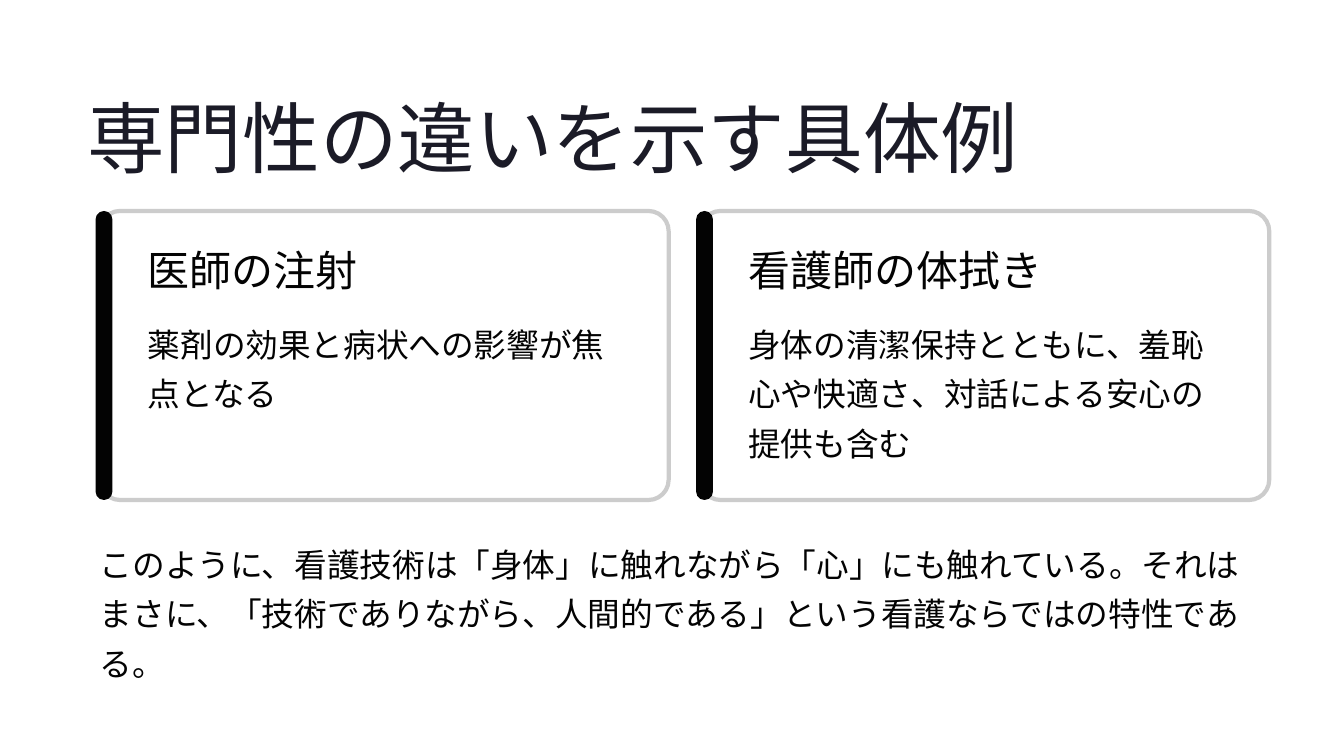
from lxml import etree
from pptx import Presentation, util as u
from pptx.dml.color import RGBColor
from pptx.enum import shapes, text
from pptx.oxml.ns import qn

INK, TITLE_INK, BORDER, WHITE = "030303", "1B1B27", "CCCCCC", "FFFFFF"
HEADING_FONT, BODY_FONT = "Inter", "Lato"


def paint(color_format, hex_color):
    """Give a font colour or a solid fill's foreground its RGB value."""
    color_format.rgb = RGBColor.from_string(hex_color)


class SlideBuilder:
    def __init__(self, slide):
        self.slide = slide

    def set_text(self, holder, words, font, size, leading, color=INK, wrap=True):
        frame = holder.text_frame
        frame.margin_left = frame.margin_right = 0
        frame.margin_top = frame.margin_bottom = 0
        frame.auto_size = text.MSO_AUTO_SIZE.NONE
        frame.vertical_anchor = text.MSO_ANCHOR.TOP
        frame.word_wrap = wrap
        frame.text = words
        paragraph = frame.paragraphs[0]
        paragraph.alignment = text.PP_ALIGN.LEFT
        paragraph.space_before = u.Pt(0)
        paragraph.line_spacing = u.Pt(leading)
        paragraph.font.name, paragraph.font.size = font, u.Pt(size)
        paint(paragraph.font.color, color)

    def title(self, words, left, top, width, height):
        title = self.slide.shapes.title
        title.left, title.top = u.Cm(left), u.Cm(top)
        title.width, title.height = u.Cm(width), u.Cm(height)
        self.set_text(title, words, HEADING_FONT, 66.5, 83.5, TITLE_INK, wrap=False)

    def textbox(self, left, top, width, height):
        return self.slide.shapes.add_textbox(
            u.Cm(left), u.Cm(top), u.Cm(width), u.Cm(height))

    def heading(self, words, *box):
        self.set_text(self.textbox(*box), words, HEADING_FONT, 36, 41.5, wrap=False)

    def body(self, words, *box):
        self.set_text(self.textbox(*box), words, BODY_FONT, 28, 42.5)

    def rounded(self, left, top, width, height, corner, fill):
        shape = self.slide.shapes.add_shape(
            shapes.MSO_SHAPE.ROUNDED_RECTANGLE,
            u.Cm(left), u.Cm(top), u.Cm(width), u.Cm(height))
        shape.adjustments[0] = corner
        shape.shadow.inherit = False
        shape.fill.solid()
        paint(shape.fill.fore_color, fill)
        shape.line.fill.background()
        return shape

    def card(self, left, heading, description):
        top, height = 6.38, 8.74
        panel = self.rounded(left, top, 17.2, height, 0.07, WHITE)
        panel.line.width = u.Pt(3.6)
        panel.line.fill.solid()
        paint(panel.line.fill.fore_color, BORDER)
        fill_color = panel.element.spPr.find(qn("a:solidFill"))[0]
        etree.SubElement(fill_color, qn("a:alpha"), val="95000")
        self.rounded(left - 0.13, top, 0.51, height, 0.5, INK)
        self.heading(heading, left + 1.45, top + 1.06, 11.81, 1.47)
        self.body(description, left + 1.45, top + 3.12, 14.68, 4.55)


def main():
    deck = Presentation()
    deck.slide_width, deck.slide_height = u.Cm(40.64), u.Cm(22.86)
    title_only = deck.slide_layouts[5]
    builder = SlideBuilder(deck.slides.add_slide(title_only))

    builder.title("専門性の違いを示す具体例", 2.64, 2.59, 28.35, 2.95)
    margin, card_step = 3.02, 18.16
    examples = [
        ("医師の注射", "薬剤の効果と病状への影響が焦点となる"),
        ("看護師の体拭き",
         "身体の清潔保持とともに、羞恥心や快適さ、対話による安心の提供も含む"),
    ]
    for column, (heading, description) in enumerate(examples):
        builder.card(margin + column * card_step, heading, description)
    builder.body(
        "このように、看護技術は「身体」に触れながら「心」にも触れている。"
        "それはまさに、「技術でありながら、人間的である」という看護ならではの特性である。",
        margin, 16.15, 35.36, 3.02)
    deck.save("out.pptx")


if __name__ == "__main__":
    main()
